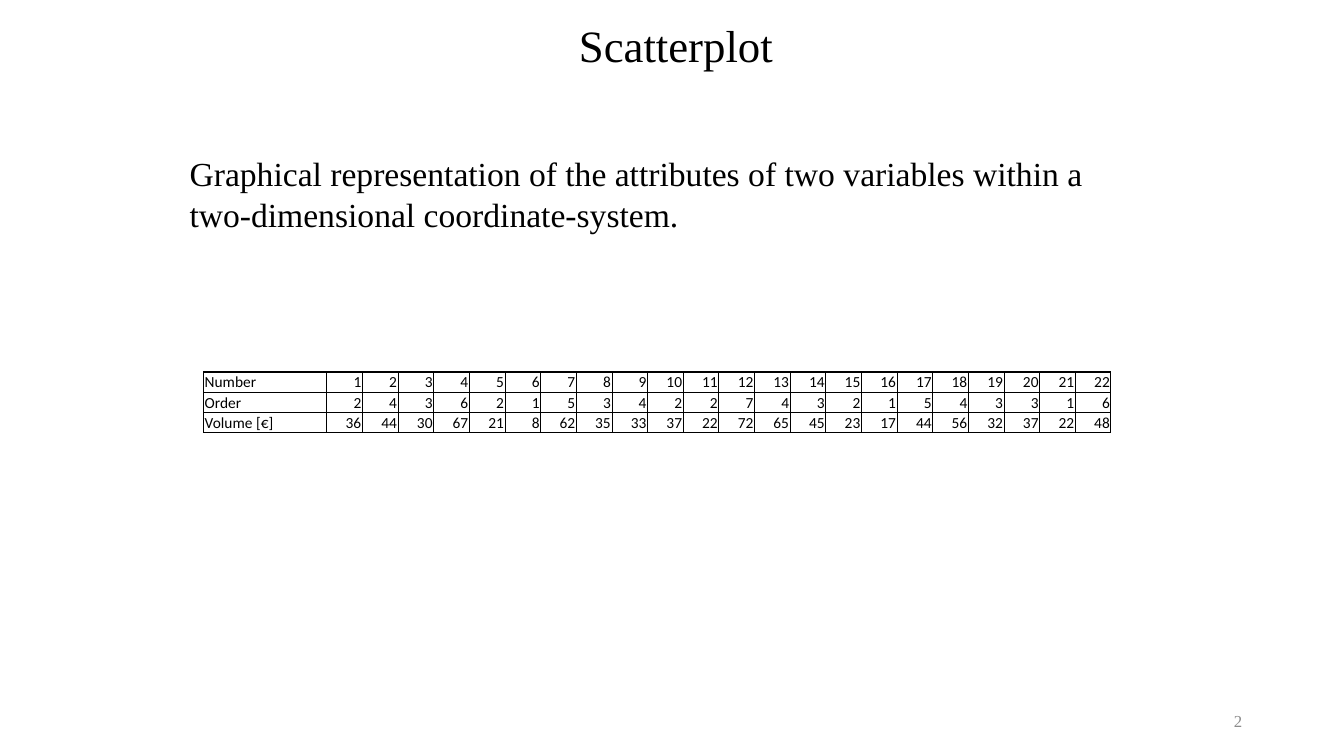
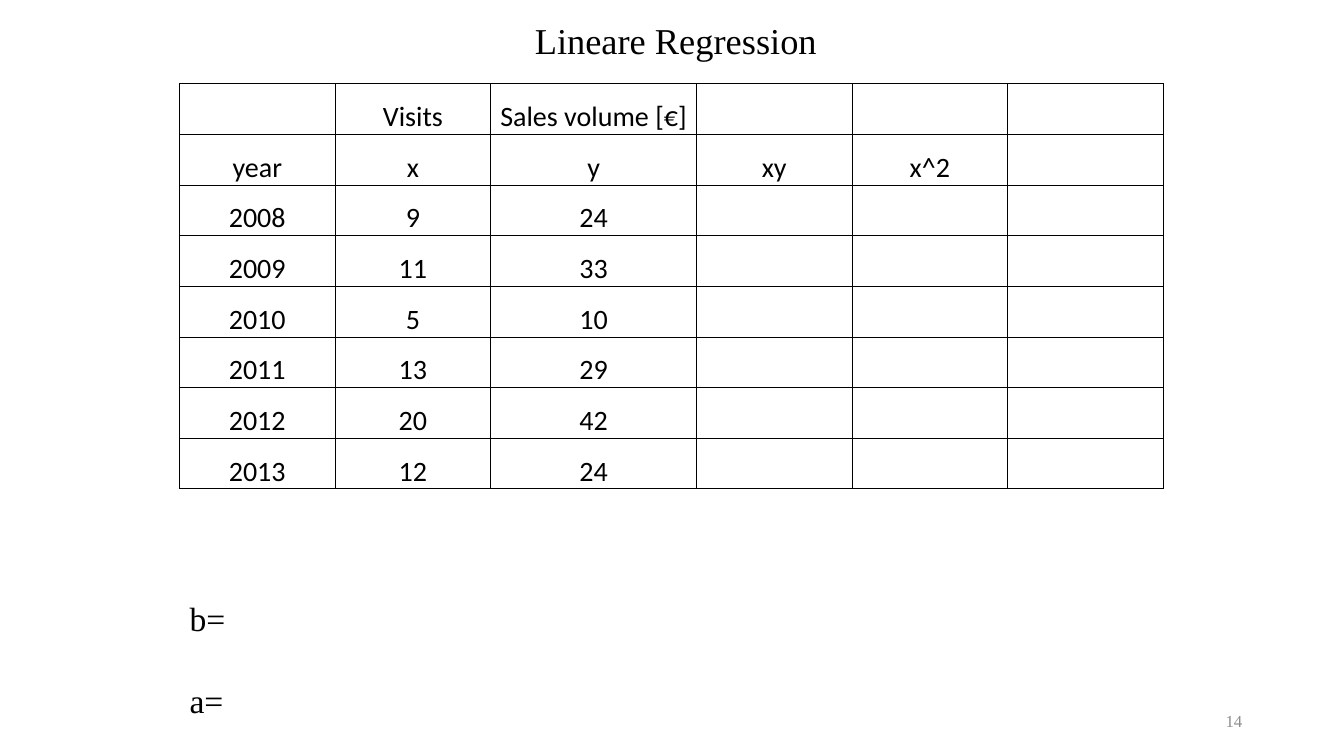
from dataclasses import dataclass

from lxml import etree
from pptx import Presentation
from pptx.dml.color import RGBColor
from pptx.enum.text import MSO_ANCHOR, MSO_AUTO_SIZE, PP_ALIGN
from pptx.oxml.ns import qn
from pptx.util import Pt

LEFT, CENTER, RIGHT = PP_ALIGN.LEFT, PP_ALIGN.CENTER, PP_ALIGN.RIGHT
TOP, MIDDLE, BOTTOM = MSO_ANCHOR.TOP, MSO_ANCHOR.MIDDLE, MSO_ANCHOR.BOTTOM
NO_FIT = MSO_AUTO_SIZE.NONE
EMU_PER_PX = 9144
TITLE_AND_CONTENT = 1


@dataclass(frozen=True)
class Theme:
    ink: str = "000000"
    muted: str = "8C8C8C"
    text_font: str = "Times New Roman"
    table_font: str = "Calibri"
    title_size: int = 32
    small_title_size: int = 26
    body_size: int = 24
    number_size: int = 12
    data_size: int = 11
    worksheet_size: int = 20
    thin: float = 0.5
    thick: float = 1


THEME = Theme()
SLIDE_SIZE = (1333, 750)
TITLE_BOX = (186, 13, 969, 71)
NUMBER_BOX = (942, 695, 300, 40)

ORDERS = [2, 4, 3, 6, 2, 1, 5, 3, 4, 2, 2, 7, 4, 3, 2, 1, 5, 4, 3, 3, 1, 6]
VOLUMES = [36, 44, 30, 67, 21, 8, 62, 35, 33, 37, 22,
           72, 65, 45, 23, 17, 44, 56, 32, 37, 22, 48]
ORDER_ROWS = [
    ["Number", *range(1, len(ORDERS) + 1)],
    ["Order", *ORDERS],
    ["Volume [€]", *VOLUMES],
]
REGRESSION_ROWS = [
    ["", "Visits", "Sales volume [€]", "", "", ""],
    ["year", "x", "y", "xy", "x^2", ""],
    *([year, visits, sales, "", "", ""] for year, visits, sales in [
        (2008, 9, 24), (2009, 11, 33), (2010, 5, 10),
        (2011, 13, 29), (2012, 20, 42), (2013, 12, 24),
    ]),
]


def px(length):
    return round(length * EMU_PER_PX)


def place(shape, box):
    shape.left, shape.top, shape.width, shape.height = map(px, box)


def style_para(para, size, font=THEME.text_font, color=THEME.ink, align=LEFT):
    para.alignment = align
    para.font.size = Pt(size)
    para.font.name = font
    para.font.color.rgb = RGBColor.from_string(color)


def setup_frame(frame, anchor):
    frame.word_wrap = True
    frame.auto_size = NO_FIT
    frame.vertical_anchor = anchor


def add_title(page, text, size):
    title = page.shapes.title
    place(title, TITLE_BOX)
    setup_frame(title.text_frame, TOP)
    title.text_frame.text = text
    style_para(title.text_frame.paragraphs[0], size, align=CENTER)


def add_body(page, box, lines, gap=0):
    body = page.placeholders[1]
    place(body, box)
    frame = body.text_frame
    setup_frame(frame, TOP)
    frame.text = "\n".join(lines)
    for index, para in enumerate(frame.paragraphs):
        para.space_before = Pt(gap if index else 0)
        properties = para._p.get_or_add_pPr()
        properties.set("marL", "0")
        properties.set("indent", "0")
        etree.SubElement(properties, qn("a:buNone"))
        style_para(para, THEME.body_size)


def add_page_number(page, number):
    frame = page.shapes.add_textbox(*map(px, NUMBER_BOX)).text_frame
    setup_frame(frame, MIDDLE)
    frame.text = str(number)
    style_para(frame.paragraphs[0], THEME.number_size, color=THEME.muted, align=RIGHT)


def add_page(deck, title, title_size, number):
    page = deck.slides.add_slide(deck.slide_layouts[TITLE_AND_CONTENT])
    add_title(page, title, title_size)
    add_page_number(page, number)
    return page


def set_borders(cell, widths):
    properties = cell._tc.get_or_add_tcPr()
    for side, width in zip("LRTB", widths):
        line = etree.SubElement(properties, qn(f"a:ln{side}"), w=str(Pt(width)))
        fill = etree.SubElement(line, qn("a:solidFill"))
        etree.SubElement(fill, qn("a:srgbClr"), val=THEME.ink)


def edge_widths(count, framed):
    thick = {0, 1, count} if framed else set()
    return [THEME.thick if edge in thick else THEME.thin for edge in range(count + 1)]


def add_grid(page, box, rows, fixed, size, aligns, framed=False):
    row_count, column_count = len(rows), len(rows[0])
    table = page.shapes.add_table(row_count, column_count, *map(px, box)).table
    table.first_row = table.horz_banding = False
    shared = (box[2] - sum(fixed.values())) / (column_count - len(fixed))
    for index, column in enumerate(table.columns):
        column.width = px(fixed.get(index, shared))
    across = edge_widths(row_count, framed)
    down = edge_widths(column_count, framed)
    for r, values in enumerate(rows):
        table.rows[r].height = px(box[3] / row_count)
        for c, value in enumerate(values):
            cell = table.cell(r, c)
            cell.margin_left = cell.margin_right = cell.margin_top = px(1)
            cell.margin_bottom = 0
            cell.vertical_anchor = BOTTOM
            set_borders(cell, (down[c], down[c + 1], across[r], across[r + 1]))
            cell.fill.background()
            cell.text = str(value)
            style_para(cell.text_frame.paragraphs[0], size, THEME.table_font,
                       align=aligns[min(c, len(aligns) - 1)])


def scatterplot_page(deck):
    page = add_page(deck, "Scatterplot", THEME.title_size, 2)
    add_body(page, (178, 147, 969, 173), [
        "Graphical representation of the attributes of two variables "
        "within a two-dimensional coordinate-system.",
    ])
    add_grid(page, (202, 369, 900, 60), ORDER_ROWS, {0: 122},
             THEME.data_size, (LEFT, RIGHT), framed=True)


def regression_page(deck):
    page = add_page(deck, "Lineare Regression", THEME.small_title_size, 14)
    add_body(page, (178, 588, 969, 126), ["b=", "a="], gap=30)
    add_grid(page, (178, 83, 976, 402), REGRESSION_ROWS, {2: 204},
             THEME.worksheet_size, (CENTER,))


def main():
    deck = Presentation()
    deck.slide_width, deck.slide_height = map(px, SLIDE_SIZE)
    scatterplot_page(deck)
    regression_page(deck)
    deck.save("out.pptx")


if __name__ == "__main__":
    main()
